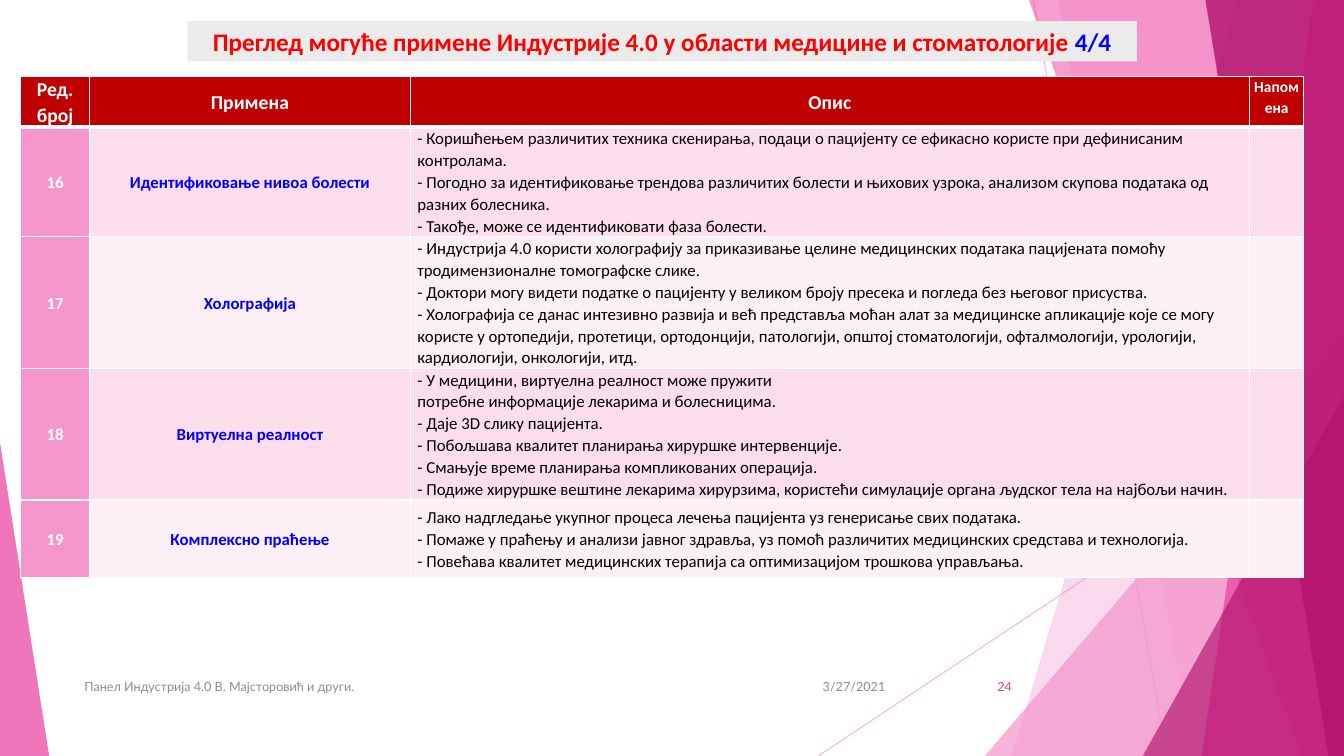
"""Build the slide on uses of Industry 4.0 in medicine and dentistry."""
from lxml.etree import SubElement
from pptx import Presentation
from pptx.dml.color import RGBColor
from pptx.enum.shapes import MSO_CONNECTOR, MSO_SHAPE
from pptx.enum.text import MSO_ANCHOR, MSO_AUTO_SIZE, PP_ALIGN
from pptx.oxml.ns import qn
from pptx.util import Cm, Pt

WIDTH, HEIGHT = 33.87, 19.05
WHITE, RED, BLUE, BLACK = "FFFFFF", "FF0000", "0000FF", "000000"
LIGHT_PINK, PINK, MAGENTA, GREY = "F496CB", "EB3D9F", "B2136D", "8C8C8C"
HEADER_RED, TITLE_GREY = "C00000", "EBEBEB"
BANDS = ("FBDDEC", "FDEFF6")

TITLE = [
    ("Преглед могуће примене Индустрије 4.0 у области медицине и стоматологије ", RED),
    ("4/4", BLUE),
]
HEADERS = ("Ред. број", "Примена", "Опис", "Напомена")
APPLICATIONS = [
    ("16", "Идентификовање нивоа болести", [
        "- Коришћењем различитих техника скенирања, подаци о пацијенту се ефикасно користе при дефинисаним контролама.",
        "- Погодно за идентификовање трендова различитих болести и њихових узрока, анализом скупова података од разних болесника.",
        "- Такође, може се идентификовати фаза болести.",
    ]),
    ("17", "Холографија", [
        "- Индустрија 4.0 користи холографију за приказивање целине медицинских података пацијената помоћу тродимензионалне томографске слике.",
        "- Доктори могу видети податке о пацијенту у великом броју пресека и погледа без његовог присуства.",
        "- Холографија се данас интезивно развија и већ представља моћан алат за медицинске апликације које се могу користе у ортопедији, протетици, ортодонцији, патологији, општој стоматологији, офталмологији, урологији, кардиологији, онкологији, итд.",
    ]),
    ("18", "Виртуелна реалност", [
        "- У медицини, виртуелна реалност може пружити",
        "потребне информације лекарима и болесницима.",
        "- Даје 3D слику пацијента.",
        "- Побољшава квалитет планирања хируршке интервенције.",
        "- Смањује време планирања компликованих операција.",
        "- Подиже хируршке вештине лекарима хирурзима, користећи симулације органа људског тела на најбољи начин.",
    ]),
    ("19", "Комплексно праћење", [
        "- Лако надгледање укупног процеса лечења пацијента уз генерисање свих података.",
        "- Помаже у праћењу и анализи јавног здравља, уз помоћ различитих медицинских средстава и технологија.",
        "- Повећава квалитет медицинских терапија са оптимизацијом трошкова управљања.",
    ]),
]
COLUMN_WIDTHS = (1.74, 8.08, 21.15, 1.37)
ROW_HEIGHTS = (1.24, 2.77, 3.32, 3.31, 1.96)

FOOTERS = [
    ("3/27/2021", 20.02, 2.54, PP_ALIGN.RIGHT, GREY),
    ("Панел Индустрија 4.0 В. Мајсторовић и други.", 1.88, 17.5, PP_ALIGN.LEFT, GREY),
    ("24", 23.85, 1.9, PP_ALIGN.RIGHT, PINK),
]

RAYS = [(26.04, 0, 29.41, HEIGHT), (WIDTH, 10.24, 20.62, HEIGHT)]
FACETS = [
    ("band", (31.19, 25.5), LIGHT_PINK, 36),
    ("band", (26.67, 30.05), LIGHT_PINK, 20),
    ("triangle", (24.82, 8.46, 9.05, 1), LIGHT_PINK, 72),
    ("band", (25.93, 32.79), PINK, 50),
    ("band", (33.1, 30.28), PINK, 70),
    ("band", (30.38, 33.48), MAGENTA, 80),
    ("triangle", (28.8, 9.98, 5.07, 1), MAGENTA, 66),
    ("triangle", (0, 11.15, 1.24, 0), PINK, 70),
]


def rgb(value):
    return RGBColor.from_string(value)


def fade(shape, percent):
    for color in shape.element.spPr.iter(qn("a:srgbClr")):
        SubElement(color, qn("a:alpha"), val=str(percent * 1000))


def add_ray(slide, ends):
    ray = slide.shapes.add_connector(MSO_CONNECTOR.STRAIGHT, *map(Cm, ends))
    ray.line.color.rgb = rgb(LIGHT_PINK)
    ray.line.width = Pt(0.75)
    fade(ray, 70)
    SubElement(ray.element.spPr, qn("a:effectLst"))


def add_facet(slide, kind, geometry, color, opacity):
    if kind == "band":
        top, bottom = geometry
        builder = slide.shapes.build_freeform(Cm(top), 0)
        corners = [(WIDTH, 0), (WIDTH, HEIGHT), (bottom, HEIGHT)]
        builder.add_line_segments([(Cm(x), Cm(y)) for x, y in corners])
        facet = builder.convert_to_shape()
    else:
        left, top, width, apex = geometry
        facet = slide.shapes.add_shape(
            MSO_SHAPE.ISOSCELES_TRIANGLE, Cm(left), Cm(top), Cm(width), Cm(HEIGHT - top))
        facet.adjustments[0] = apex
    facet.shadow.inherit = False
    facet.line.fill.background()
    facet.fill.solid()
    facet.fill.fore_color.rgb = rgb(color)
    fade(facet, opacity)


def add_footer(slide, text, left, width, alignment, color):
    box = slide.shapes.add_textbox(Cm(left), Cm(16.79), Cm(width), Cm(1.02))
    frame = box.text_frame
    frame.word_wrap = True
    frame.vertical_anchor = MSO_ANCHOR.MIDDLE
    frame.text = text
    para = frame.paragraphs[0]
    para.alignment = alignment
    style_font(para.font, 9, color, False, "Lato")


def style_font(font, size, color, bold, name="Calibri"):
    font.name, font.size, font.bold = name, Pt(size), bold
    font.color.rgb = rgb(color)


def add_borders(cell, bottom_width):
    properties = cell._tc.get_or_add_tcPr()
    for side, width in (("L", 1), ("R", 1), ("T", 1), ("B", bottom_width)):
        line = SubElement(properties, qn(f"a:ln{side}"), w=str(Pt(width)))
        fill = SubElement(line, qn("a:solidFill"))
        SubElement(fill, qn("a:srgbClr"), val=WHITE)


def fill_cell(cell, lines, fill, size, color, bold=True, centered=True,
              inset=0.18, anchor=MSO_ANCHOR.MIDDLE, bottom_width=1):
    add_borders(cell, bottom_width)
    cell.fill.solid()
    cell.fill.fore_color.rgb = rgb(fill)
    cell.margin_left = cell.margin_right = Cm(inset)
    cell.margin_top = cell.margin_bottom = 0
    cell.vertical_anchor = anchor
    cell.text = "\n".join(lines)
    for para in cell.text_frame.paragraphs:
        para.alignment = PP_ALIGN.CENTER if centered else PP_ALIGN.LEFT
        para.line_spacing = 1.07
        style_font(para.font, size, color, bold)


def add_applications(slide):
    table = slide.shapes.add_table(
        len(ROW_HEIGHTS), len(COLUMN_WIDTHS), Cm(0.52), Cm(1.93),
        Cm(sum(COLUMN_WIDTHS)), Cm(sum(ROW_HEIGHTS))).table
    for column, width in zip(table.columns, COLUMN_WIDTHS):
        column.width = Cm(width)
    for row, height in zip(table.rows, ROW_HEIGHTS):
        row.height = Cm(height)
    for index, header in enumerate(HEADERS):
        is_note = index == len(HEADERS) - 1
        fill_cell(table.cell(0, index), [header], HEADER_RED, 11 if is_note else 14,
                  WHITE, inset=0.1, bottom_width=3,
                  anchor=MSO_ANCHOR.TOP if is_note else MSO_ANCHOR.MIDDLE)
    for index, (number, name, description) in enumerate(APPLICATIONS):
        band = BANDS[index % 2]
        number_cell, name_cell, description_cell, note_cell = table.rows[index + 1].cells
        fill_cell(number_cell, [number], LIGHT_PINK, 12, WHITE, inset=0.1)
        fill_cell(name_cell, [name], band, 12, BLUE)
        fill_cell(description_cell, description, band, 12, BLACK, bold=False, centered=False)
        fill_cell(note_cell, [], band, 12, BLACK, bold=False)


def format_title(slide):
    title = slide.shapes.title
    title.left, title.top, title.width, title.height = map(Cm, (4.72, 0.53, 23.93, 1.02))
    title.fill.solid()
    title.fill.fore_color.rgb = rgb(TITLE_GREY)
    frame = title.text_frame
    frame.word_wrap = True
    frame.auto_size = MSO_AUTO_SIZE.NONE
    frame.vertical_anchor = MSO_ANCHOR.MIDDLE
    frame.margin_top = frame.margin_bottom = 0
    para = frame.paragraphs[0]
    para.alignment = PP_ALIGN.CENTER
    para.font.name, para.font.size, para.font.bold = "Calibri", Pt(18), True
    for text, color in TITLE:
        span = para.add_run()
        span.text = text
        span.font.color.rgb = rgb(color)
    title.element.getparent().append(title.element)


def main():
    deck = Presentation()
    deck.slide_width, deck.slide_height = Cm(WIDTH), Cm(HEIGHT)
    page = deck.slides.add_slide(deck.slide_layouts.get_by_name("Title Only"))
    for ends in RAYS:
        add_ray(page, ends)
    for facet in FACETS:
        add_facet(page, *facet)
    for footer in FOOTERS:
        add_footer(page, *footer)
    add_applications(page)
    format_title(page)
    deck.save("out.pptx")


if __name__ == "__main__":
    main()
